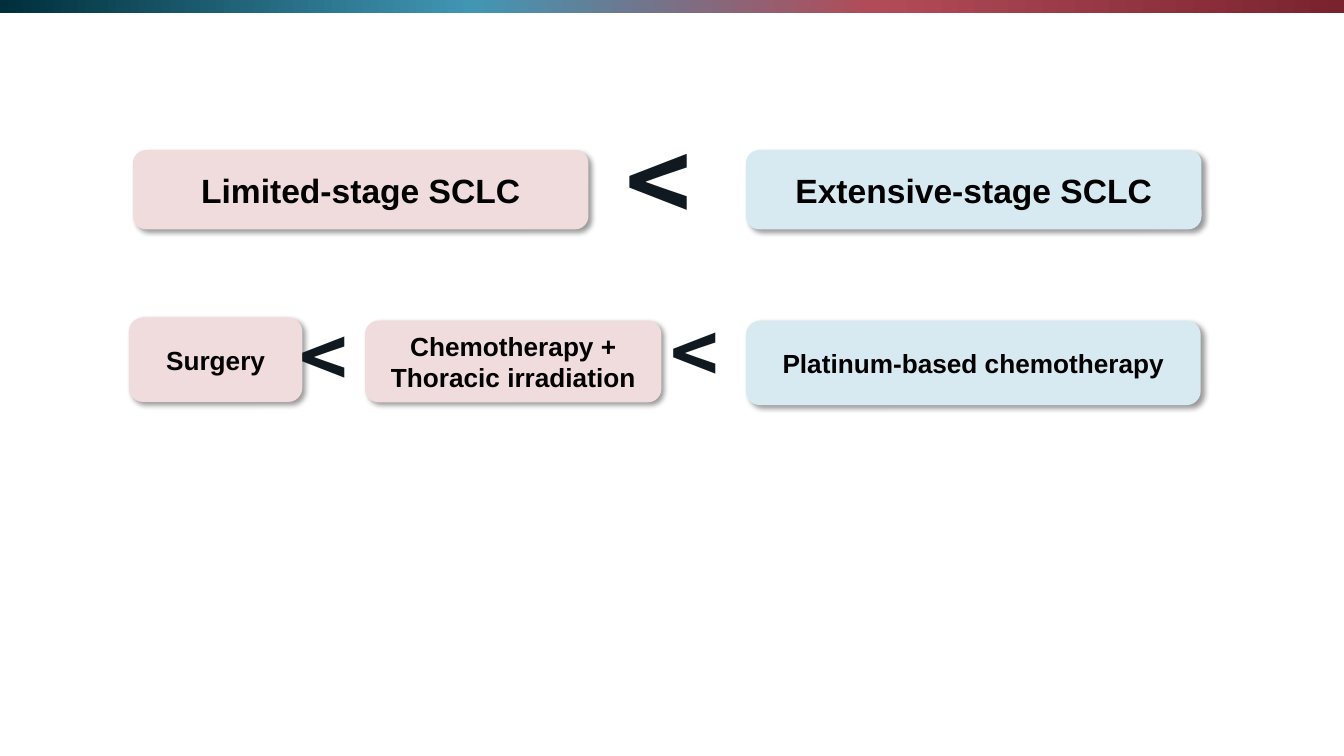
from lxml.etree import SubElement
from pptx import Presentation
from pptx.dml.color import RGBColor
from pptx.enum.shapes import MSO_SHAPE
from pptx.enum.text import MSO_ANCHOR, MSO_AUTO_SIZE, PP_ALIGN
from pptx.oxml.ns import qn
from pptx.util import Cm, Pt

THEME = {
    "limited": "F0DBDD",
    "extensive": "D8EAF1",
    "text": "000000",
    "sign": "101820",
    "band": [(0, "79232E"), (35, "B24B58"), (65, "4196B4"), (100, "002F3B")],
    "stage_size": 24,
    "therapy_size": 18.7,
    "stage_sign_size": 80,
    "therapy_sign_size": 58.7,
    "font": "Arial",
    "sign_font": "Noto Sans CJK KR",
}


def add_box(kind, left, top, width, height):
    s = slide.shapes.add_shape(kind, Cm(left), Cm(top), Cm(width), Cm(height))
    s.line.fill.background()
    s.shadow.inherit = False
    return s


def write(s, text, size, font, color, align):
    tf = s.text_frame
    tf.word_wrap = True
    p = tf.paragraphs[0]
    p.alignment = align
    r = p.add_run()
    r.text = text
    for name, value in {"name": font, "size": Pt(size), "bold": True}.items():
        setattr(r.font, name, value)
    r.font.color.rgb = RGBColor.from_string(color)


prs = Presentation()
prs.slide_width, prs.slide_height = Cm(33.87), Cm(19.05)
slide = prs.slides.add_slide(prs.slide_layouts[6])

band = add_box(MSO_SHAPE.RECTANGLE, 0, 0, 33.87, 0.33)
band.fill.gradient()
band.fill.gradient_angle = 180
stops = band._element.spPr.find(qn("a:gradFill")).find(qn("a:gsLst"))
for stop in list(stops):
    stops.remove(stop)
for position, color in THEME["band"]:
    stop = SubElement(stops, qn("a:gs"), pos=str(position * 1000))
    SubElement(stop, qn("a:srgbClr"), val=color)

boxes = [
    ("Platinum-based chemotherapy", "extensive", "therapy_size", 18.8, 8.08, 11.46, 2.13),
    ("Chemotherapy + Thoracic irradiation", "limited", "therapy_size", 9.2, 8.08, 7.47, 2.06),
    ("Surgery", "limited", "therapy_size", 3.25, 8, 4.37, 2.13),
    ("Limited-stage SCLC", "limited", "stage_size", 3.35, 3.78, 11.48, 2),
    ("Extensive-stage SCLC", "extensive", "stage_size", 18.8, 3.78, 11.48, 2),
]
for text, fill, size, *place in boxes:
    s = add_box(MSO_SHAPE.ROUNDED_RECTANGLE, *place)
    s.fill.solid()
    s.fill.fore_color.rgb = RGBColor.from_string(THEME[fill])
    effects = s._element.spPr.find(qn("a:effectLst"))
    shadow = SubElement(effects, qn("a:outerShdw"), blurRad=str(Pt(4)), dist=str(Pt(3)),
                        dir="2700000", algn="tl", rotWithShape="0")
    color = SubElement(shadow, qn("a:srgbClr"), val=THEME["text"])
    SubElement(color, qn("a:alpha"), val="40000")
    s.text_frame.vertical_anchor = MSO_ANCHOR.MIDDLE
    write(s, text, THEME[size], THEME["font"], THEME["text"], PP_ALIGN.CENTER)

signs = [
    ("stage_sign_size", PP_ALIGN.CENTER, 15.52, 2.72, 3.68),
    ("therapy_sign_size", PP_ALIGN.LEFT, 16.64, 7.5, 2.77),
    ("therapy_sign_size", PP_ALIGN.LEFT, 7.29, 7.6, 2.77),
]
for size, align, left, top, height in signs:
    s = slide.shapes.add_textbox(Cm(left), Cm(top), Cm(2.13), Cm(height))
    s.text_frame.auto_size = MSO_AUTO_SIZE.SHAPE_TO_FIT_TEXT
    write(s, "<", THEME[size], THEME["sign_font"], THEME["sign"], align)

prs.save("out.pptx")
